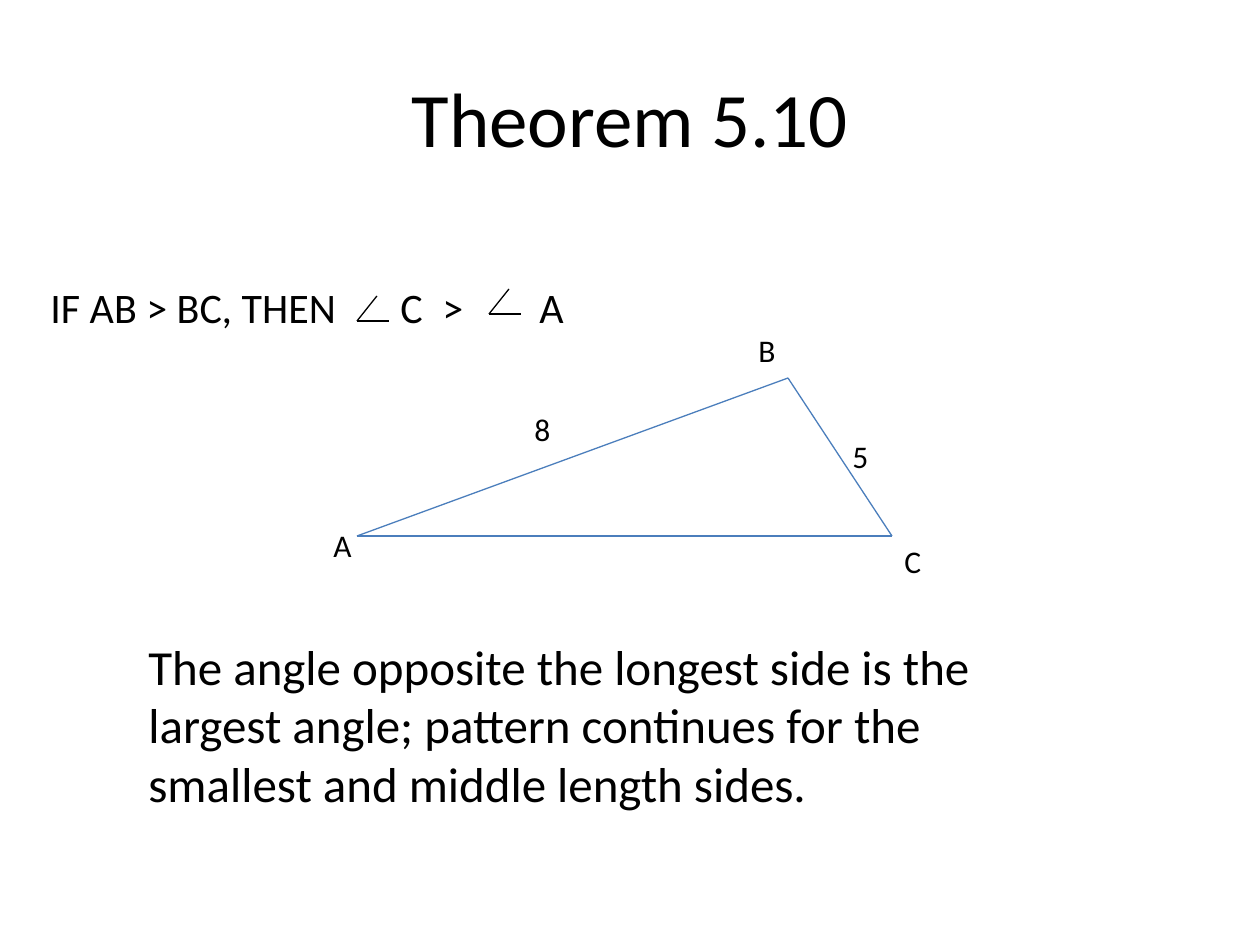
from dataclasses import dataclass

from lxml import etree
from pptx import Presentation
from pptx.dml.color import RGBColor
from pptx.enum.shapes import MSO_CONNECTOR
from pptx.enum.text import MSO_ANCHOR, MSO_AUTO_SIZE, PP_ALIGN
from pptx.oxml.ns import qn
from pptx.util import Emu, Pt

STRAIGHT = MSO_CONNECTOR.STRAIGHT
TOP, MIDDLE = MSO_ANCHOR.TOP, MSO_ANCHOR.MIDDLE
LEFT, CENTER = PP_ALIGN.LEFT, PP_ALIGN.CENTER
GROW, FIXED = MSO_AUTO_SIZE.SHAPE_TO_FIT_TEXT, MSO_AUTO_SIZE.NONE
EMU_PER_PX = 914400 / 126


@dataclass(frozen=True)
class Theme:
    font: str = "Calibri"
    ink: str = "000000"
    side: str = "4B7EBC"
    title: int = 44
    body: int = 28
    statement: int = 24
    label: int = 18
    stroke: float = 0.75


THEME = Theme()


def px(length):
    return Emu(round(length * EMU_PER_PX))


def add_text(slide, text, box, *, size, align=LEFT, anchor=TOP, fit=GROW, tabs=()):
    holder = slide.shapes.add_textbox(*map(px, box))
    frame = holder.text_frame
    frame.word_wrap = True
    frame.auto_size = fit
    frame.vertical_anchor = anchor
    paragraph = frame.paragraphs[0]
    paragraph.alignment = align
    run = paragraph.add_run()
    run.text = text
    run.font.name = THEME.font
    run.font.size = Pt(size)
    run.font.color.rgb = RGBColor.from_string(THEME.ink)
    if tabs:
        stops = etree.SubElement(paragraph._p.get_or_add_pPr(), qn("a:tabLst"))
        for stop in tabs:
            etree.SubElement(stops, qn("a:tab"), pos=str(px(stop)), algn="l")


def add_line(slide, start, end, color):
    line = slide.shapes.add_connector(STRAIGHT, *map(px, (*start, *end)))
    line.line.color.rgb = RGBColor.from_string(color)
    line.line.width = Pt(THEME.stroke)
    etree.SubElement(line._element.spPr, qn("a:effectLst"))


def add_title(slide, box):
    add_text(slide, "Theorem 5.10", box, size=THEME.title,
             align=CENTER, anchor=MIDDLE, fit=FIXED)


def add_triangle(slide, box):
    left, top, width, height = box
    a = (left, top + height)
    b = (left + 431, top)
    c = (left + width, top + height)
    for start, end in ((a, c), (c, b), (a, b)):
        add_line(slide, start, end, THEME.side)

    labels = (
        ("A", -36, 142, 63, 50),
        ("B", 389, -53, 73, 53),
        ("C", width, height, 63, 50),
        ("8", 165, 26, 73, 53),
        ("5", 483, 53, 84, 53),
    )
    for label, x, y, label_width, label_height in labels:
        add_text(slide, label, (left + x, top + y, label_width, label_height),
                 size=THEME.label)


def add_statement(slide, box):
    left, top = box[:2]
    add_text(slide, "IF AB > BC, THEN\tC\t>\tA", box,
             size=THEME.statement, tabs=(350, 392, 489))
    for x, y in ((451, 39), (319, 46)):
        vertex = (left + x, top + y)
        for run, rise in ((20, 25), (32, 0)):
            add_line(slide, vertex, (vertex[0] + run, vertex[1] - rise), THEME.ink)


def add_conclusion(slide, box):
    add_text(slide, "The angle opposite the longest side is the largest angle; "
             "pattern continues for the smallest and middle length sides.",
             box, size=THEME.body)


def main():
    deck = Presentation()
    deck.slide_width, deck.slide_height = px(1260), px(945)
    slide = deck.slides.add_slide(deck.slide_layouts[6])
    add_title(slide, (63, 38, 1134, 158))
    add_triangle(slide, (357, 378, 535, 158))
    add_statement(slide, (38, 275, 635, 63))
    add_conclusion(slide, (136, 630, 935, 190))
    deck.save("out.pptx")


if __name__ == "__main__":
    main()
